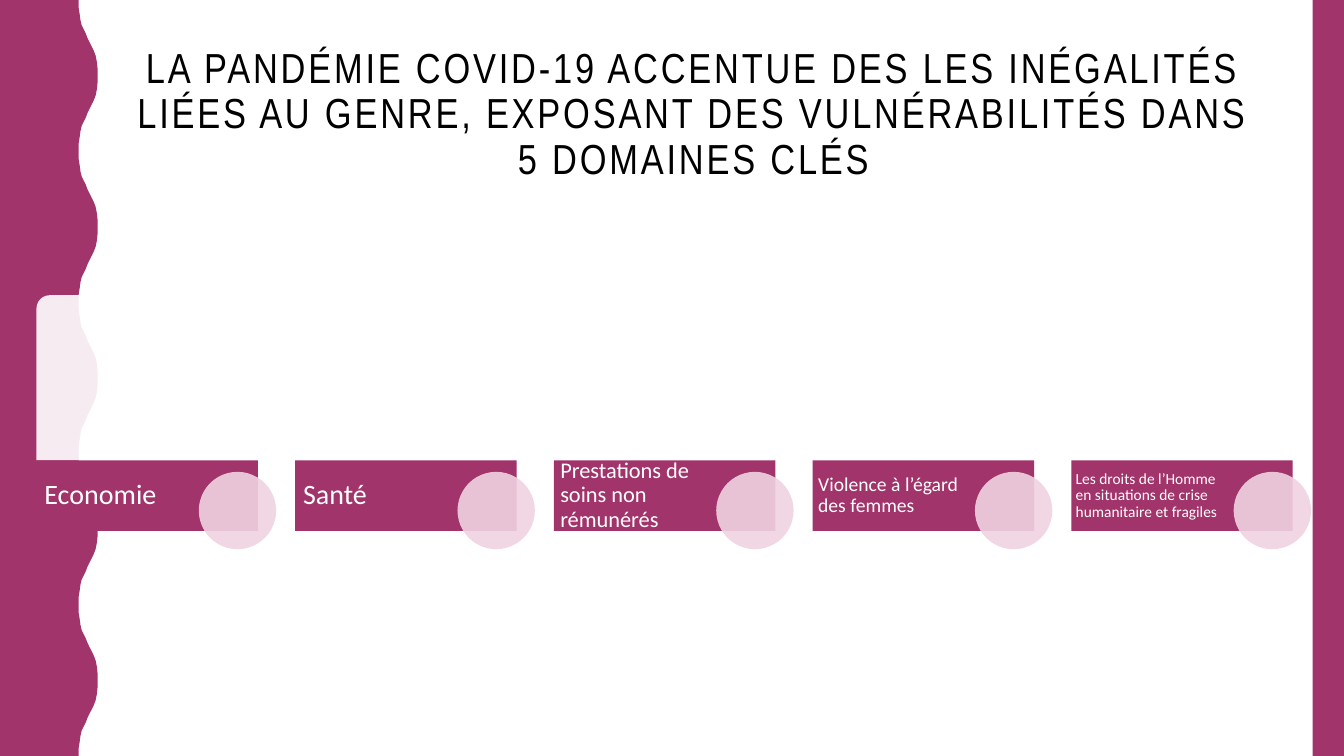
"""Build the slide on the five areas where the pandemic deepens gender inequality."""
from dataclasses import dataclass

from lxml.etree import SubElement
from pptx import Presentation
from pptx.dml.color import RGBColor
from pptx.enum.shapes import MSO_SHAPE
from pptx.enum.text import MSO_ANCHOR, MSO_AUTO_SIZE, PP_ALIGN
from pptx.oxml.ns import qn
from pptx.util import Cm, Pt

SLIDE_WIDTH, SLIDE_HEIGHT = 33.87, 19.05
TITLE = (
    "LA PANDÉMIE COVID-19 ACCENTUE DES LES INÉGALITÉS LIÉES AU GENRE, "
    "EXPOSANT DES VULNÉRABILITÉS DANS 5 DOMAINES CLÉS"
)
WAVE_PERIOD, WAVE_COUNT = 3.81, 5
HALF_WAVE = [
    (1.98, 0), (1.98, 0.18), (2.01, 0.36), (2.03, 0.51), (2.06, 0.64),
    (2.11, 0.74), (2.16, 0.84), (2.21, 0.97), (2.26, 1.07), (2.31, 1.17),
    (2.36, 1.27), (2.41, 1.4), (2.44, 1.55), (2.46, 1.73), (2.46, 1.9),
]
CARD_LEFT, CARD_PITCH, CARD_WIDTH = 0.92, 6.52, 5.58
PANEL_TOP, PANEL_HEIGHT = 7.44, 4.16
BAND_TOP, BAND_HEIGHT = 11.6, 1.78
LABEL_WIDTH = 3.94
DISC_OFFSET, DISC_TOP, DISC_SIZE = 4.09, 11.89, 1.95


@dataclass(frozen=True)
class Theme:
    """Colours, fonts and type sizes of the slide."""

    plum: RGBColor = RGBColor(0xA1, 0x34, 0x6A)
    pink: RGBColor = RGBColor(0xF0, 0xD2, 0xE1)
    white: RGBColor = RGBColor(0xFF, 0xFF, 0xFF)
    black: RGBColor = RGBColor(0, 0, 0)
    title_font: str = "Arial Narrow"
    body_font: str = "Calibri"
    title_size: int = 30
    large: int = 20
    medium: int = 16
    small: int = 14
    tiny: int = 11
    line_spacing: float = 0.9
    opacity: int = 90


class SlideBuilder:
    """Draw styled elements on one slide."""

    def __init__(self, slide, theme):
        """Keep the slide and its theme."""
        self.slide = slide
        self.theme = theme

    def paint(self, shape, color, opacity=100):
        """Give a shape a plain fill without line or shadow."""
        shape.shadow.inherit = False
        shape.line.fill.background()
        shape.fill.solid()
        shape.fill.fore_color.rgb = color
        if opacity < 100:
            color_element = shape.fill._xPr.find(qn("a:solidFill"))[0]
            SubElement(color_element, qn("a:alpha"), val=str(opacity * 1000))

    def shape(self, kind, left, top, width, height, color, opacity=100):
        """Add a painted preset shape."""
        shape = self.slide.shapes.add_shape(
            kind, Cm(left), Cm(top), Cm(width), Cm(height)
        )
        self.paint(shape, color, opacity)
        return shape

    def wavy_edge(self):
        """Add the plum strip whose right side is a wave."""
        mirrored = [(x, WAVE_PERIOD - y) for x, y in reversed(HALF_WAVE)]
        points = [
            (Cm(x), Cm(y + wave * WAVE_PERIOD))
            for wave in range(WAVE_COUNT)
            for x, y in HALF_WAVE + mirrored
        ]
        builder = self.slide.shapes.build_freeform(0, 0)
        builder.add_line_segments(points + [(0, Cm(SLIDE_HEIGHT))], close=True)
        self.paint(builder.convert_to_shape(), self.theme.plum)

    def title(self, text):
        """Place and format the title placeholder."""
        title = self.slide.shapes.title
        title.left, title.top = Cm(3.18), Cm(1.06)
        title.width, title.height = Cm(28.6), Cm(4.14)
        frame = title.text_frame
        frame.text = text
        frame.word_wrap = True
        frame.auto_size = MSO_AUTO_SIZE.NONE
        frame.vertical_anchor = MSO_ANCHOR.TOP
        paragraph = frame.paragraphs[0]
        paragraph.alignment = PP_ALIGN.CENTER
        self.format(paragraph, self.theme.title_font, self.theme.title_size,
                    self.theme.black)
        paragraph.runs[0].font._element.set("spc", "200")

    def format(self, paragraph, font_name, size, color):
        """Set the line spacing and font of a paragraph."""
        paragraph.line_spacing = self.theme.line_spacing
        paragraph.font.name = font_name
        paragraph.font.size = Pt(size)
        paragraph.font.color.rgb = color

    def label(self, text, left, size):
        """Add the text of a card, with margins that follow its size."""
        box = self.slide.shapes.add_textbox(
            Cm(left), Cm(BAND_TOP), Cm(LABEL_WIDTH), Cm(BAND_HEIGHT)
        )
        frame = box.text_frame
        frame.text = text
        frame.word_wrap = True
        frame.vertical_anchor = MSO_ANCHOR.MIDDLE
        frame.margin_top = frame.margin_bottom = 0
        frame.margin_left = Cm(size * 0.01)
        frame.margin_right = Cm(size * 0.01 / 3)
        self.format(frame.paragraphs[0], self.theme.body_font, size,
                    self.theme.white)

    def card(self, text, left, size):
        """Add one area: panel, band, label and disc."""
        theme = self.theme
        panel = self.shape(MSO_SHAPE.ROUND_2_SAME_RECTANGLE, left, PANEL_TOP,
                           CARD_WIDTH, PANEL_HEIGHT, theme.white, theme.opacity)
        panel.adjustments[0] = 0.08
        self.shape(MSO_SHAPE.RECTANGLE, left, BAND_TOP, CARD_WIDTH,
                   BAND_HEIGHT, theme.plum)
        self.label(text, left, size)
        self.shape(MSO_SHAPE.OVAL, left + DISC_OFFSET, DISC_TOP, DISC_SIZE,
                   DISC_SIZE, theme.pink, theme.opacity)


def main():
    """Create the presentation and save it."""
    presentation = Presentation()
    presentation.slide_width = Cm(SLIDE_WIDTH)
    presentation.slide_height = Cm(SLIDE_HEIGHT)
    theme = Theme()
    slide = presentation.slides.add_slide(presentation.slide_layouts[5])
    builder = SlideBuilder(slide, theme)
    builder.wavy_edge()
    builder.shape(MSO_SHAPE.RECTANGLE, 33.08, 0, 0.79, SLIDE_HEIGHT, theme.plum)
    builder.title(TITLE)
    areas = [
        ("Economie", theme.large),
        ("Santé", theme.large),
        ("Prestations de soins non rémunérés", theme.medium),
        ("Violence à l’égard des femmes", theme.small),
        ("Les droits de l’Homme en situations de crise humanitaire et fragiles",
         theme.tiny),
    ]
    for index, (text, size) in enumerate(areas):
        builder.card(text, CARD_LEFT + index * CARD_PITCH, size)
    presentation.save("out.pptx")


if __name__ == "__main__":
    main()
